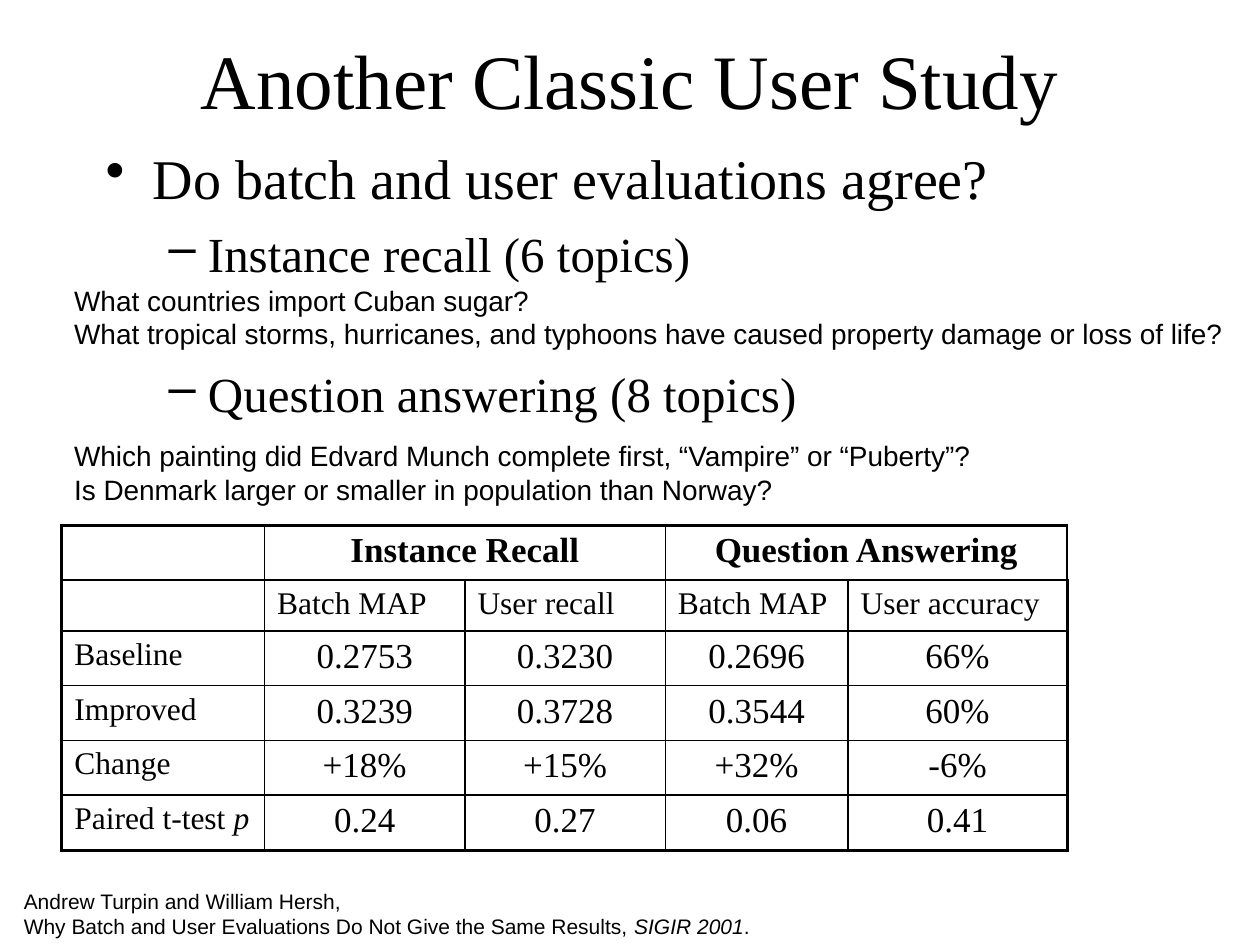
"""Build a slide on a user study with question examples and a results table."""
import pptx
import pptx.dml.color
import pptx.enum.text
import pptx.oxml
import pptx.oxml.ns
import pptx.util

Pt = pptx.util.Pt
ALIGN = pptx.enum.text.PP_ALIGN
ANCHOR = pptx.enum.text.MSO_ANCHOR
SERIF, SANS, INK = "Times New Roman", "Arial", "000000"

TITLE = [([("Another Classic User Study", {})], {"alignment": ALIGN.CENTER})]
BULLETS = [
    ("Do batch and user evaluations agree?", "•", 32, 27, 27, 4),
    ("Instance recall (6 topics)", "–", 28, 58.5, 22.5, 7),
    ("Question answering (8 topics)", "–", 28, 58.5, 22.5, 46.6),
]
RECALL = [
    ([("What countries import Cuban sugar?", {})], {}),
    ([("What tropical storms, hurricanes, and typhoons have caused "
       "property damage or loss of life?", {})], {}),
]
ANSWERING = [
    ([("Which painting did Edvard Munch complete first, “Vampire” or “Puberty”?", {})], {}),
    ([("Is Denmark larger or smaller in population than Norway?", {})], {}),
]
CITATION = [
    ([("Andrew Turpin and William Hersh,", {})], {}),
    ([("Why Batch and User Evaluations Do Not Give the Same Results, ", {}),
      ("SIGIR 2001", {"italic": True}), (".", {})], {}),
]
TEXTS = [
    ((54, 0, 612, 90), TITLE, SERIF, 44, ANCHOR.MIDDLE),
    ((35.3, 158.4, 696, 46), RECALL, SANS, 16, ANCHOR.TOP),
    ((35.3, 247, 534, 46), ANSWERING, SANS, 16, ANCHOR.TOP),
    ((6.5, 504, 444, 36), CITATION, SANS, 12, ANCHOR.TOP),
]
RESULTS = [
    ["", "Instance Recall", "", "Question Answering", ""],
    ["", "Batch MAP", "User recall", "Batch MAP", "User accuracy"],
    ["Baseline", "0.2753", "0.3230", "0.2696", "66%"],
    ["Improved", "0.3239", "0.3728", "0.3544", "60%"],
    ["Change", "+18%", "+15%", "+32%", "-6%"],
    ["Paired t-test ", "0.24", "0.27", "0.06", "0.41"],
]
COLS = [115.9, 114.5, 114.5, 104.4, 125.3]
ROWS = [31.3, 29, 31.3, 31.3, 31.3, 31.6]


def color(value):
    return pptx.dml.color.RGBColor.from_string(value)


def assign(target, values):
    for name, value in values.items():
        setattr(target, name, value)


def add_run(p, text, font, size, **extra):
    r = p.add_run()
    r.text = text
    assign(r.font, {"name": font, "size": Pt(size), **extra})
    r.font.color.rgb = color(INK)


def add_box(s, box, anchor=ANCHOR.TOP):
    tf = s.shapes.add_textbox(*map(Pt, box)).text_frame
    assign(tf, {"word_wrap": True, "vertical_anchor": anchor})
    return tf


def next_paragraph(tf, index):
    return tf.add_paragraph() if index else tf.paragraphs[0]


def add_text(s, box, paragraphs, font, size, anchor):
    tf = add_box(s, box, anchor)
    for i, (runs, layout) in enumerate(paragraphs):
        p = next_paragraph(tf, i)
        assign(p, layout)
        for text, extra in runs:
            add_run(p, text, font, size, **extra)


def add_bullets(s):
    tf = add_box(s, (53.3, 78.5, 612, 228))
    for i, (text, mark, size, left, hang, before) in enumerate(BULLETS):
        p = next_paragraph(tf, i)
        p.space_before = Pt(before)
        add_run(p, text, SERIF, size)
        pPr = p._p.get_or_add_pPr()
        pPr.set("marL", str(Pt(left)))
        pPr.set("indent", str(-Pt(hang)))
        pPr.append(pptx.oxml.parse_xml(
            f'<a:buChar {pptx.oxml.ns.nsdecls("a")} char="{mark}"/>'))


def set_borders(cell, outer):
    tcPr = cell._tc.get_or_add_tcPr()
    for i, (side, is_outer) in enumerate(outer.items()):
        width = Pt(2.25 if is_outer else 1)
        tcPr.insert(i, pptx.oxml.parse_xml(
            f'<a:{side} {pptx.oxml.ns.nsdecls("a")} w="{width}"><a:solidFill>'
            f'<a:srgbClr val="{INK}"/></a:solidFill></a:{side}>'))


def add_results(s):
    frame = s.shapes.add_table(len(ROWS), len(COLS), Pt(35.3), Pt(300.2),
                               Pt(sum(COLS)), Pt(sum(ROWS)))
    table = frame.table
    assign(table, {"first_row": False, "horz_banding": False})
    for col, width in zip(table.columns, COLS):
        col.width = Pt(width)
    for row, height in zip(table.rows, ROWS):
        row.height = Pt(height)
    for first in (1, 3):
        table.cell(0, first).merge(table.cell(0, first + 1))
    for i, row in enumerate(RESULTS):
        for j, text in enumerate(row):
            cell = table.cell(i, j)
            cell.fill.background()
            set_borders(cell, {"lnL": j == 0, "lnR": j == len(COLS) - 1,
                               "lnT": i == 0, "lnB": i == len(ROWS) - 1})
            if not text:
                continue
            label = i == 1 or j == 0
            p = cell.text_frame.paragraphs[0]
            p.alignment = ALIGN.LEFT if label else ALIGN.CENTER
            add_run(p, text, SERIF, 18 if label else 20, bold=i == 0)
    add_run(table.cell(len(ROWS) - 1, 0).text_frame.paragraphs[0],
            "p", SERIF, 18, italic=True)


def main():
    prs = pptx.Presentation()
    assign(prs, {"slide_width": Pt(720), "slide_height": Pt(540)})
    s = prs.slides.add_slide(prs.slide_layouts[6])
    add_bullets(s)
    for text in TEXTS:
        add_text(s, *text)
    add_results(s)
    prs.save("out.pptx")


if __name__ == "__main__":
    main()
